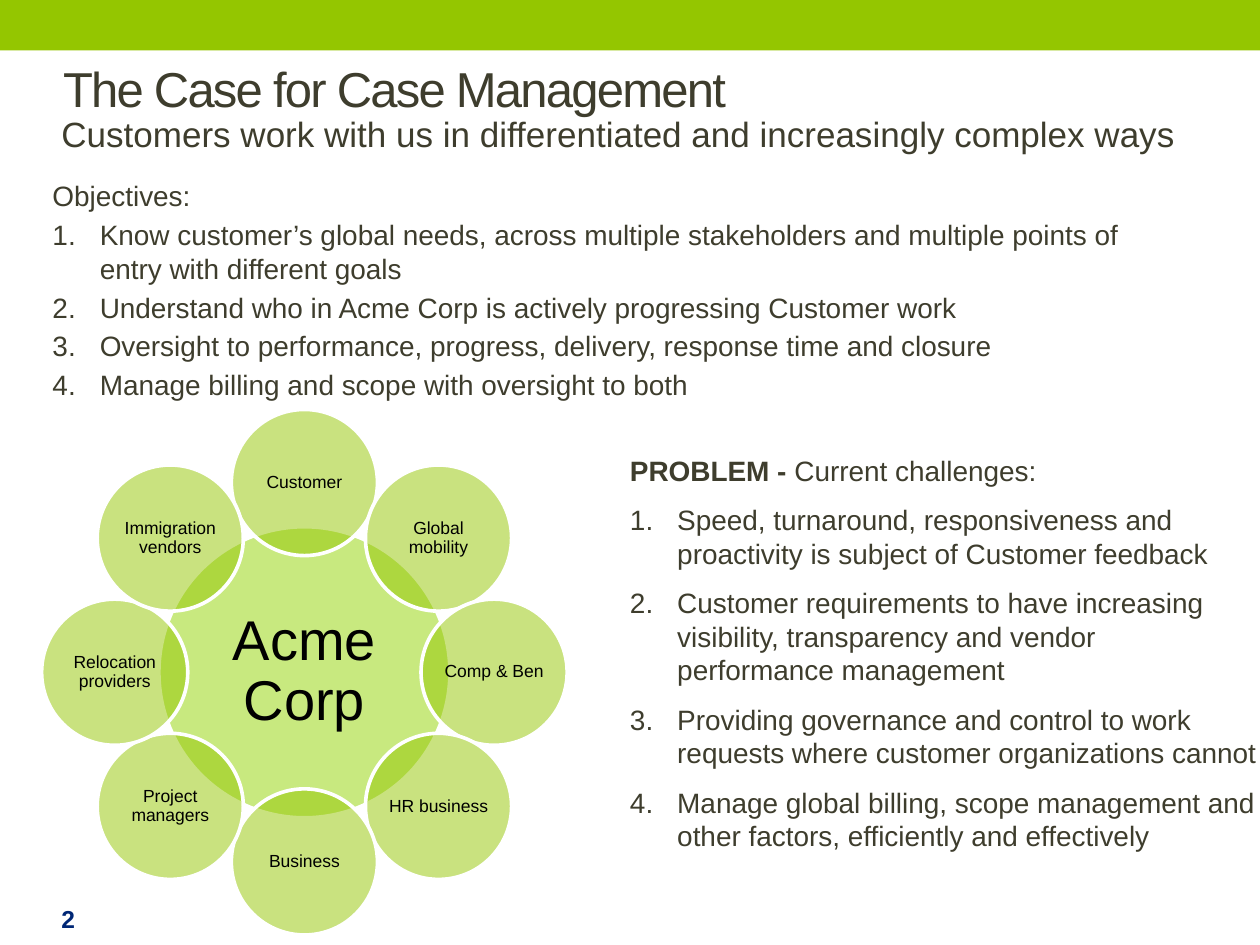
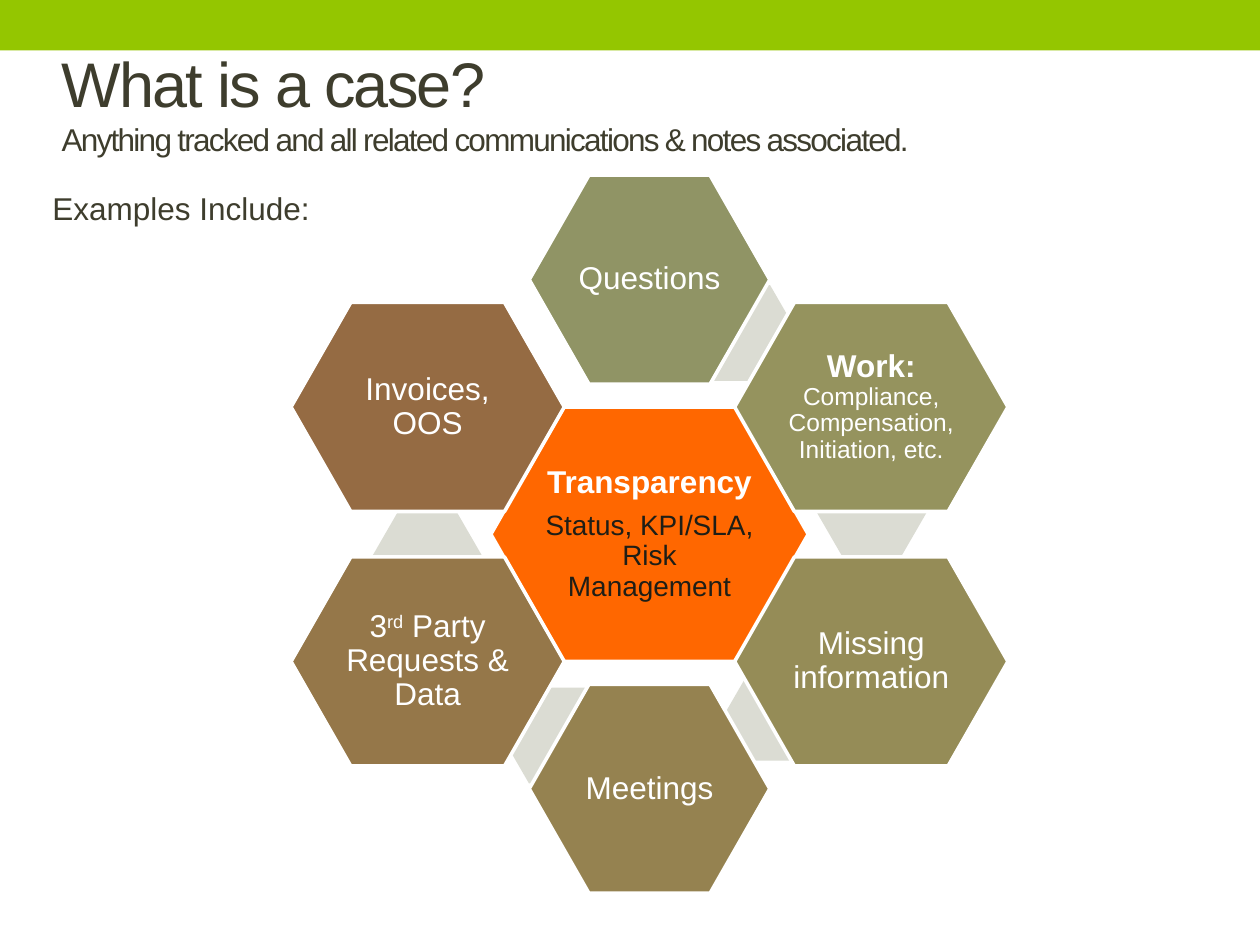
from pptx import Presentation
from pptx.dml.color import RGBColor
from pptx.enum import shapes, text
from pptx.util import Pt
from lxml import etree
import math

A = "{http://schemas.openxmlformats.org/drawingml/2006/main}"
FONT = "Arial"
COLORS = {
    "band": "94C600", "ink": "3E3D2D", "page": "002776", "white": "FFFFFF",
    "black": "000000", "hub": "92D400", "core": "FF6700", "core_ink": "1F1E16",
    "spacer": "DBDCD3", "questions": "909465", "work": "95935E",
    "missing": "958C57", "meetings": "958250", "party": "957749",
    "invoices": "956B43",
}
ALIGN = text.PP_ALIGN
ANCHOR = text.MSO_ANCHOR
NUMBER_INDENT = 27

OBJECTIVES = [
    "Know customer’s global needs, across multiple stakeholders and multiple "
    "points of entry with different goals",
    "Understand who in Acme Corp is actively progressing Customer work",
    "Oversight to performance, progress, delivery, response time and closure",
    "Manage billing and scope with oversight to both",
]
CHALLENGES = [
    "Speed, turnaround, responsiveness and proactivity is subject of Customer feedback",
    "Customer requirements to have increasing visibility, transparency and vendor "
    "performance management",
    "Providing governance and control to work requests where customer organizations cannot",
    "Manage global billing, scope management and other factors, efficiently and effectively",
]
STAKEHOLDERS = [
    "Customer", "Global mobility", "Comp & Ben", "HR business", "Business",
    "Project managers", "Relocation providers", "Immigration vendors",
]
EXAMPLES = [
    ("questions", (0, -2), (53, -115), [("Questions", {})]),
    ("work", (1, -1), (127, -13),
     [("Work: ", {"bold": True}), ("Compliance, Compensation, Initiation, etc.", {"size": 14})]),
    ("missing", (1, 1), (75, 102), [("Missing information", {})]),
    ("meetings", (0, 2), (-53, 115), [("Meetings", {})]),
    ("party", (-1, 1), (-127, 13),
     [("3", {}), ("rd", {"baseline": 30000}), (" Party Requests & Data", {})]),
    ("invoices", (-1, -1), None, [("Invoices, OOS", {})]),
]


def rgb(name):
    return RGBColor.from_string(COLORS[name])


def set_font(font, size, color, bold=None):
    font.name = FONT
    font.size = Pt(size)
    font.color.rgb = rgb(color)
    font.bold = bold


def add_run(p, words, size=None, bold=None, **attributes):
    r = p.add_run()
    r.text = words
    if size:
        r.font.size = Pt(size)
    if bold is not None:
        r.font.bold = bold
    for name, value in attributes.items():
        r.font._element.set(name, str(value))


def write_paragraph(p, runs, size, color, bold=None, align=ALIGN.LEFT, line=1, before=0, after=0):
    set_font(p.font, size, color, bold)
    p.alignment = align
    p.line_spacing = line
    p.space_before, p.space_after = Pt(before), Pt(after)
    for words, style in runs:
        add_run(p, words, **style)


def set_frame(tf, inset_x, inset_y, anchor):
    tf.word_wrap = True
    tf.auto_size = text.MSO_AUTO_SIZE.NONE
    tf.vertical_anchor = anchor
    tf.margin_left = tf.margin_right = Pt(inset_x)
    tf.margin_top = tf.margin_bottom = Pt(inset_y)


def add_text_frame(slide, box, inset=(0, 0), anchor=ANCHOR.TOP):
    tf = slide.shapes.add_textbox(*map(Pt, box)).text_frame
    set_frame(tf, *inset, anchor)
    return tf


def add_centered(slide, kind, center, size, fill, outlined=True):
    (x, y), (width, height) = center, size
    sp = slide.shapes.add_shape(
        kind, Pt(x - width / 2), Pt(y - height / 2), Pt(width), Pt(height))
    sp.shadow.inherit = False
    sp.fill.solid()
    sp.fill.fore_color.rgb = rgb(fill)
    if outlined:
        sp.line.color.rgb = rgb("white")
        sp.line.width = Pt(2.08)
    else:
        sp.line.fill.background()
    return sp


def add_circle(slide, center, diameter, fill, label, size, inset):
    sp = add_centered(slide, shapes.MSO_SHAPE.OVAL, center, (diameter, diameter), fill)
    color = next(sp.fill._xPr.iter(A + "srgbClr"))
    etree.SubElement(color, A + "alpha", val="50000")
    set_frame(sp.text_frame, inset, inset, ANCHOR.MIDDLE)
    write_paragraph(sp.text_frame.paragraphs[0], [(label, {})], size, "black",
                    align=ALIGN.CENTER, line=0.9)


def add_hexagon(slide, center, size, fill, slant=0.286, outlined=True):
    sp = add_centered(slide, shapes.MSO_SHAPE.HEXAGON, center, size, fill, outlined)
    sp.adjustments[0] = slant
    set_frame(sp.text_frame, 2, 2, ANCHOR.MIDDLE)
    return sp


def add_page(prs, title_box, title_size, title, subtitle=None):
    slide = prs.slides.add_slide(prs.slide_layouts[5])
    width, height = prs.slide_width.pt, 28.8
    add_centered(slide, shapes.MSO_SHAPE.RECTANGLE, (width / 2, height / 2),
                 (width, height), "band", outlined=False)
    sp = slide.shapes.title
    sp.left, sp.top, sp.width, sp.height = map(Pt, title_box)
    set_frame(sp.text_frame, 7.2, 3.6, ANCHOR.MIDDLE)
    p = sp.text_frame.paragraphs[0]
    write_paragraph(p, [(title, {"spc": -100})], title_size, "ink")
    if subtitle:
        p.add_line_break()
        add_run(p, subtitle, size=18, spc=-100)
    return slide


def add_numbered_list(slide, box, heading, items, before):
    tf = add_text_frame(slide, box)
    write_paragraph(tf.paragraphs[0], heading, 16, "ink", after=3)
    for item in items:
        p = tf.add_paragraph()
        write_paragraph(p, [(item, {})], 16, "ink", before=before, after=3)
        pPr = p._p.get_or_add_pPr()
        pPr.set("marL", str(Pt(NUMBER_INDENT)))
        pPr.set("indent", str(-Pt(NUMBER_INDENT)))
        number = etree.Element(A + "buAutoNum", type="arabicPeriod")
        pPr.find(A + "defRPr").addprevious(number)


def add_stakeholder_ring(slide, box):
    left, top, side = box
    petal = 83.5
    radius = (side - petal) / 2
    x, y = left + side / 2, top + side / 2
    add_circle(slide, (x, y), 166.3, "hub", "Acme Corp", 32, 2.9)
    for i, label in enumerate(STAKEHOLDERS):
        angle = 2 * math.pi * i / len(STAKEHOLDERS)
        center = x + radius * math.sin(angle), y - radius * math.cos(angle)
        add_circle(slide, center, petal, "band", label, 10, 0.7)


def add_example_honeycomb(slide, box):
    left, top, width, height = box
    x, y = left + width / 2, top + height / 2
    cell_height = 119.5
    side_width, middle_width = 156.2, 137.5
    step_x, step_y = (width - side_width) / 2, (height - cell_height) / 4

    tf = add_hexagon(slide, (x, y), (181.4, 145.4), "core").text_frame
    write_paragraph(tf.paragraphs[0], [("Transparency", {})], 18, "white", True,
                    ALIGN.CENTER, 0.9, after=6.3)
    write_paragraph(tf.add_paragraph(), [("Status, KPI/SLA, Risk Management", {})],
                    16, "core_ink", align=ALIGN.CENTER, line=0.9)

    for fill, (column, row), spacer, runs in EXAMPLES:
        if spacer:
            add_hexagon(slide, (x + spacer[0], y + spacer[1]), (63.4, 54.7),
                        "spacer", 0.289, outlined=False)
        cell_width = side_width if column else middle_width
        sp = add_hexagon(slide, (x + column * step_x, y + row * step_y),
                         (cell_width, cell_height), fill)
        write_paragraph(sp.text_frame.paragraphs[0], runs, 18, "white",
                        align=ALIGN.CENTER, line=0.9)


def build_case_for_management(prs):
    slide = add_page(prs, (28.8, 36, 663, 28.8), 28, "The Case for Case Management")
    tf = add_text_frame(slide, (28, 60.5, 663, 31.7), (7.2, 3.6))
    write_paragraph(tf.paragraphs[0], [(
        "Customers work with us in differentiated and increasingly complex ways", {})], 20, "ink")
    add_stakeholder_ring(slide, (23.8, 234, 300.3))
    tf = add_text_frame(slide, (28, 520, 28, 10), (7.2, 3.6), ANCHOR.MIDDLE)
    write_paragraph(tf.paragraphs[0], [("2", {})], 14, "page", True)
    add_numbered_list(slide, (30, 102.2, 636, 178), [("Objectives:", {})], OBJECTIVES, 0)
    add_numbered_list(slide, (360, 259.2, 360, 230.4),
                      [("PROBLEM - ", {"bold": True}), ("Current challenges:", {})],
                      CHALLENGES, 6)


def build_what_is_a_case(prs):
    slide = add_page(prs, (28, 31, 663, 53.3), 36, "What is a case?",
                     "Anything tracked and all related communications & notes associated.")
    add_example_honeycomb(slide, (166.3, 100.1, 409.7, 410.4))
    tf = add_text_frame(slide, (30, 108, 204, 21.6))
    write_paragraph(tf.paragraphs[0], [("Examples Include:", {})], 18, "ink", after=3)


def main():
    prs = Presentation()
    prs.slide_width, prs.slide_height = Pt(720), Pt(540)
    build_case_for_management(prs)
    build_what_is_a_case(prs)
    prs.save("out.pptx")


if __name__ == "__main__":
    main()
